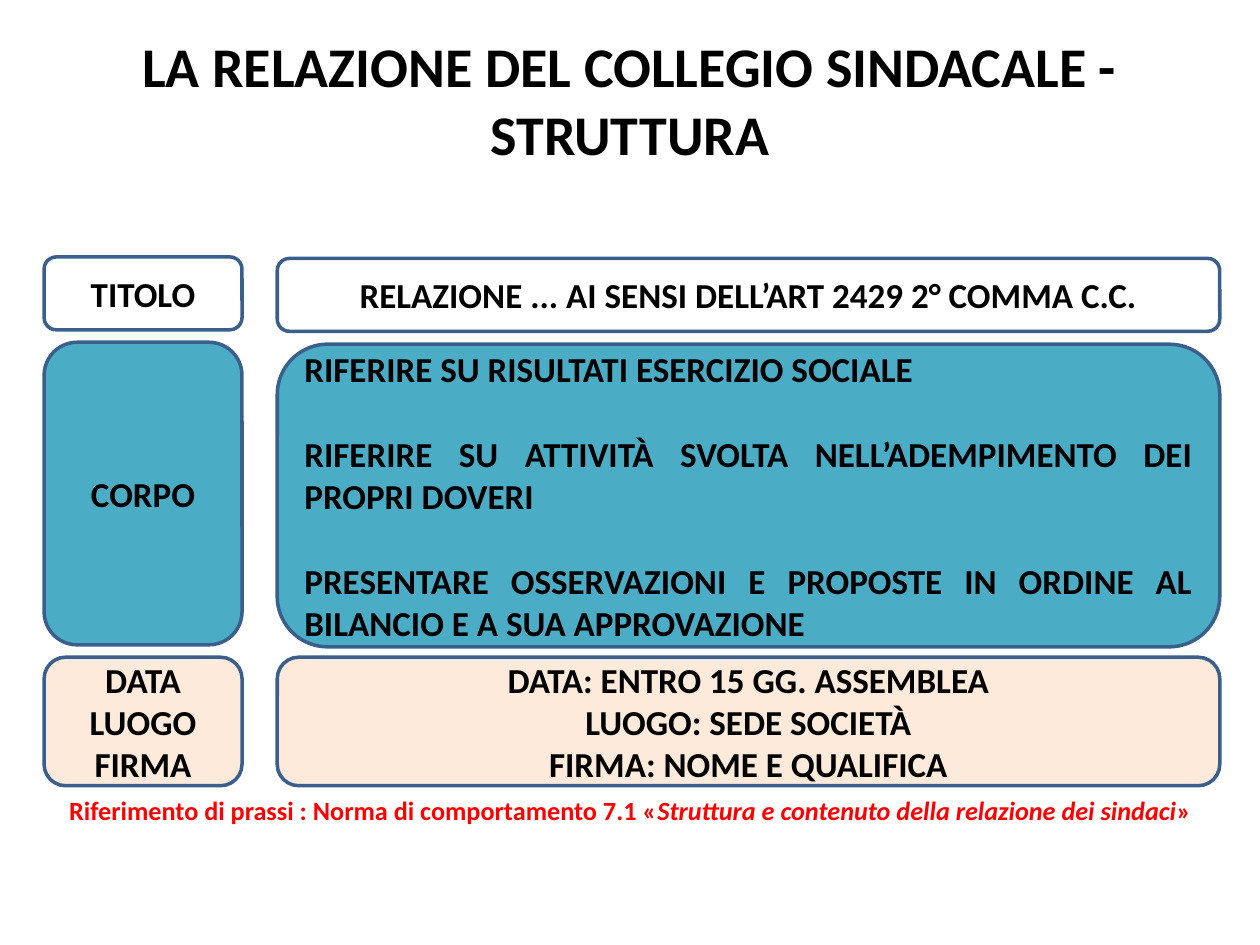
from dataclasses import dataclass, field

import pptx
import pptx.dml.color
import pptx.enum.shapes
import pptx.enum.text
import pptx.util

Cm, Pt = pptx.util.Cm, pptx.util.Pt
RGB = pptx.dml.color.RGBColor.from_string
Align = pptx.enum.text.PP_ALIGN
Anchor = pptx.enum.text.MSO_ANCHOR


@dataclass(frozen=True)
class Theme:
    font: str = "Calibri"
    ink: str = "000000"
    reference: str = "FF0000"
    border: str = "3A5F8C"
    heading_fill: str = "FFFFFF"
    body_fill: str = "4BACC6"
    closing_fill: str = "FDEADA"
    title_size: float = 32
    box_size: float = 20
    reference_size: float = 15
    border_width: float = 2


THEME = Theme()


@dataclass(frozen=True)
class Run:
    text: str
    italic: bool = False


@dataclass(frozen=True)
class TextStyle:
    size: float
    color: str = THEME.ink
    align: Align = Align.CENTER
    anchor: Anchor = Anchor.MIDDLE
    space_between: float = 0


@dataclass(frozen=True)
class Area:
    """A rectangle measured in centimetres."""
    left: float
    top: float
    width: float
    height: float

    def lengths(self) -> list[pptx.util.Length]:
        return [Cm(v) for v in (self.left, self.top, self.width, self.height)]


@dataclass(frozen=True)
class Section:
    label: str
    contents: list[str]
    height: float
    fill: str
    content_drop: float = 0  # how far the content box sits below its label
    content_style: TextStyle = field(default=TextStyle(THEME.box_size))


LABEL_LEFT, LABEL_WIDTH = 0.89, 3.99
CONTENT_LEFT, CONTENT_WIDTH = 5.59, 19
SECTIONS_TOP, SECTION_GAP = 5.18, 0.25
SLIDE_WIDTH, SLIDE_HEIGHT = 25.4, 19.05

SECTIONS = [
    Section("TITOLO", ["RELAZIONE ... AI SENSI DELL’ART 2429 2° COMMA C.C."],
            1.47, THEME.heading_fill, 0.03),
    Section("CORPO",
            ["RIFERIRE SU RISULTATI ESERCIZIO SOCIALE",
             "RIFERIRE SU ATTIVITÀ SVOLTA NELL’ADEMPIMENTO DEI PROPRI DOVERI",
             "PRESENTARE OSSERVAZIONI E PROPOSTE IN ORDINE AL BILANCIO "
             "E A SUA APPROVAZIONE"],
            6.1, THEME.body_fill, 0.04,
            TextStyle(THEME.box_size, align=Align.JUSTIFY, space_between=24.4)),
    Section("DATA LUOGO FIRMA",
            ["DATA: ENTRO 15 GG. ASSEMBLEA", "LUOGO: SEDE SOCIETÀ",
             "FIRMA: NOME E QUALIFICA"],
            2.59, THEME.closing_fill),
]


def write_text(shape, paragraphs: list[list[Run]], style: TextStyle) -> None:
    frame = shape.text_frame
    frame.word_wrap = True
    frame.vertical_anchor = style.anchor
    for index, runs in enumerate(paragraphs):
        paragraph = frame.add_paragraph() if index else frame.paragraphs[0]
        paragraph.alignment = style.align
        if index:
            paragraph.space_before = Pt(style.space_between)
        for part in runs:
            run = paragraph.add_run()
            run.text = part.text
            formats = {"name": THEME.font, "size": Pt(style.size),
                       "bold": True, "italic": part.italic}
            for attribute, value in formats.items():
                setattr(run.font, attribute, value)
            run.font.color.rgb = RGB(style.color)


def add_rounded_box(slide, area: Area, fill: str, lines: list[str],
                    style: TextStyle) -> None:
    box = slide.shapes.add_shape(
        pptx.enum.shapes.MSO_SHAPE.ROUNDED_RECTANGLE, *area.lengths())
    box.shadow.inherit = False
    box.fill.solid()
    box.fill.fore_color.rgb = RGB(fill)
    box.line.color.rgb = RGB(THEME.border)
    box.line.width = Pt(THEME.border_width)
    write_text(box, [[Run(line)] for line in lines], style)


def add_caption(slide, area: Area, runs: list[Run], style: TextStyle) -> None:
    write_text(slide.shapes.add_textbox(*area.lengths()), [runs], style)


def add_sections(slide) -> None:
    top = SECTIONS_TOP
    for section in SECTIONS:
        add_rounded_box(slide, Area(LABEL_LEFT, top, LABEL_WIDTH, section.height),
                        section.fill, [section.label], TextStyle(THEME.box_size))
        add_rounded_box(slide, Area(CONTENT_LEFT, top + section.content_drop,
                                    CONTENT_WIDTH, section.height),
                        section.fill, section.contents, section.content_style)
        top += section.height + SECTION_GAP


def main() -> None:
    deck = pptx.Presentation()
    deck.slide_width, deck.slide_height = Cm(SLIDE_WIDTH), Cm(SLIDE_HEIGHT)
    slide = deck.slides.add_slide(deck.slide_layouts[6])
    add_caption(slide, Area(0, 1.24, SLIDE_WIDTH, 1.52),
                [Run("LA RELAZIONE DEL COLLEGIO SINDACALE - STRUTTURA")],
                TextStyle(THEME.title_size))
    add_sections(slide)
    add_caption(slide, Area(0, 15.88, SLIDE_WIDTH, 0.89),
                [Run("Riferimento di prassi : Norma di comportamento 7.1 «"),
                 Run("Struttura e contenuto della relazione dei sindaci", True),
                 Run("»")],
                TextStyle(THEME.reference_size, THEME.reference,
                          anchor=Anchor.TOP))
    deck.save("out.pptx")


if __name__ == "__main__":
    main()
